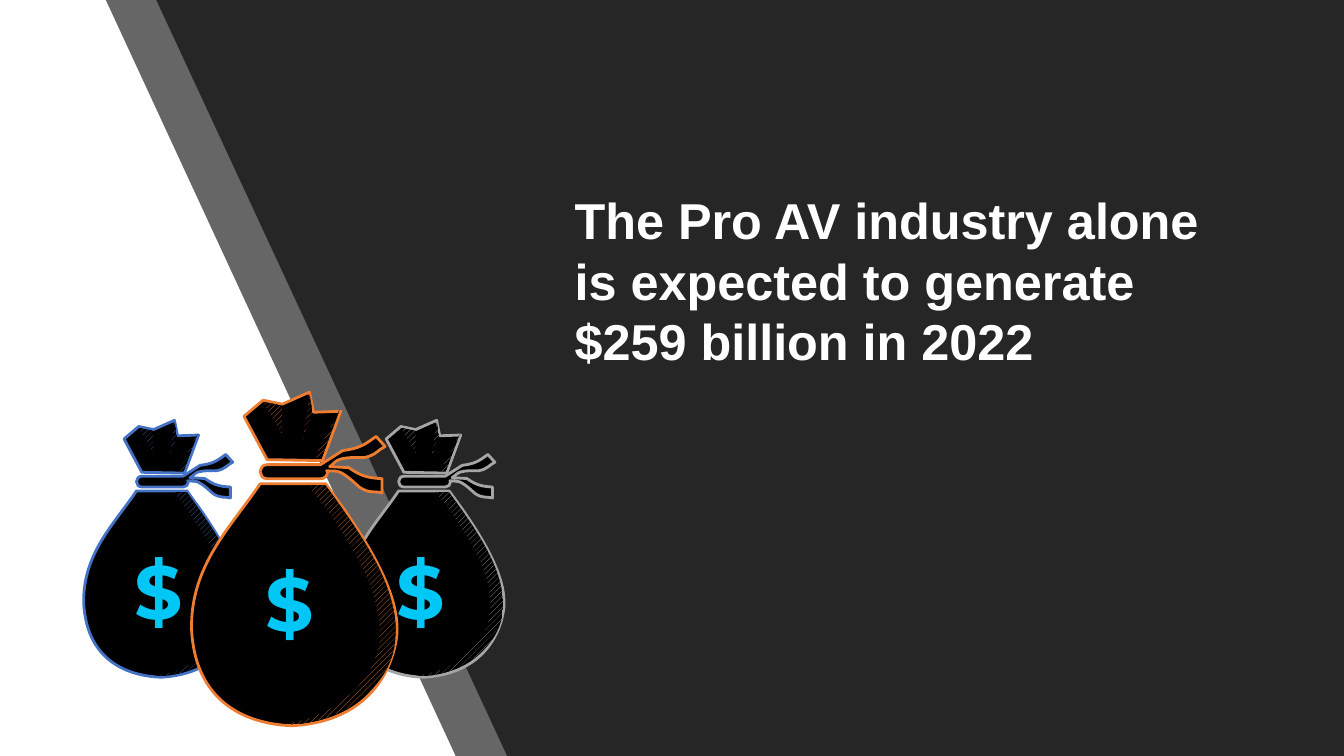
from math import cos, radians, sin

from lxml.etree import SubElement
from pptx import Presentation
from pptx.dml.color import RGBColor
from pptx.enum.dml import MSO_PATTERN
from pptx.enum.shapes import MSO_SHAPE
from pptx.enum.text import MSO_ANCHOR, MSO_AUTO_SIZE, PP_ALIGN
from pptx.oxml.ns import qn
from pptx.util import Inches, Pt

CURVE_STEPS = 12


def paint(fill, color, hatch=None):
    """Fill with one colour, or with diagonal hatching over it."""
    if hatch:
        fill.patterned()
        fill.pattern = MSO_PATTERN.WIDE_UPWARD_DIAGONAL
        fill.fore_color.rgb = RGBColor.from_string(hatch)
        fill.back_color.rgb = RGBColor.from_string(color)
    else:
        fill.solid()
        fill.fore_color.rgb = RGBColor.from_string(color)


def draw(shapes, outline, left=0, top=0, scale=1, turn=0, pivot=(0, 0)):
    """Closed outline: 2 numbers are a corner, 6 are a Bezier segment."""
    # Turn back about the pivot, so that the rotated shape lands in place
    c, s = cos(radians(turn)), sin(radians(turn))
    px, py = pivot
    steps = []
    for step in outline:
        pairs = [(x - px, y - py) for x, y in zip(step[::2], step[1::2])]
        steps.append([(Inches(left + (px + x * c + y * s) * scale),
                       Inches(top + (py - x * s + y * c) * scale)) for x, y in pairs])

    # Sampled curves give the exact frame
    points = []
    for step in steps:
        if len(step) == 1:
            points += step
            continue
        ends = [points[-1]] + step
        for i in range(1, CURVE_STEPS + 1):
            t = i / CURVE_STEPS
            u = 1 - t
            weights = (u ** 3, 3 * u * u * t, 3 * u * t * t, t ** 3)
            points.append(tuple(round(sum(w * end[axis] for w, end in zip(weights, ends)))
                                for axis in (0, 1)))
    builder = shapes.build_freeform(*points[0], scale=1.0)
    builder.add_line_segments(points[1:], close=True)
    shape = builder.convert_to_shape()

    # True Bezier segments inside that frame
    route = next(shape._element.iter(qn("a:path")))
    for child in list(route):
        route.remove(child)
    for index, step in enumerate(steps):
        tag = "a:cubicBezTo" if len(step) == 3 else "a:lnTo" if index else "a:moveTo"
        segment = SubElement(route, qn(tag))
        for x, y in step:
            SubElement(segment, qn("a:pt"), x=str(x - shape.left), y=str(y - shape.top))
    SubElement(route, qn("a:close"))
    shape.rotation = turn
    shape.shadow.inherit = False
    shape.line.fill.background()
    return shape


deck = Presentation()
deck.slide_width = Inches(13.33)
deck.slide_height = Inches(7.5)
page = deck.slides.add_slide(deck.slide_layouts[6])
paint(page.background.fill, "000000")

# White ground and the two slanted dark panels
ground = page.shapes.add_shape(MSO_SHAPE.RECTANGLE, 0, 0, deck.slide_width, deck.slide_height)
ground.shadow.inherit = False
paint(ground.fill, "FFFFFF")
ground.line.fill.background()

for upper, lower, right, opacity in [(1.05, 4.52, 13.32, 70), (1.55, 5.03, 13.33, 100)]:
    panel = draw(page.shapes, [(right, 7.5), (lower, 7.5), (upper, 0), (right, 0)])
    paint(panel.fill, "262626")
    if opacity < 100:
        tint = panel.fill._xPr.find(qn("a:solidFill"))[0]
        SubElement(tint, qn("a:alpha"), val=str(opacity * 1000))

# Parts of a money bag, measured from its top left corner
SACK = [(0.68, 0.91), (1.33, 0.91), (1.49, 1.13),
        (1.84, 1.63, 2.09, 2.10, 2.03, 2.46), (1.97, 2.82, 1.71, 3.27, 1.00, 3.31),
        (0.67, 3.30, 0.04, 3.17, 0.00, 2.35), (-0.01, 1.71, 0.40, 1.33, 0.68, 0.91)]
SACK_SHADE = [(1.33, 0.93), (1.76, 1.52, 2.06, 1.98, 2.02, 2.46),
              (1.99, 2.93, 1.47, 3.29, 0.99, 3.30), (0.91, 3.29), (1.01, 3.28),
              (1.43, 3.20, 1.83, 2.87, 1.86, 2.46), (1.89, 2.04, 1.67, 1.64, 1.32, 1.14),
              (1.16, 0.93)]
TIE = [(1.83, 0.44), (1.92, 0.54), (1.85, 0.57, 1.83, 0.63, 1.71, 0.65),
       (1.40, 0.64, 1.44, 0.70, 1.37, 0.74), (1.56, 0.75),
       (1.69, 0.84, 1.75, 0.85, 1.89, 0.86), (1.89, 1.00),
       (1.81, 0.98, 1.76, 1.01, 1.66, 0.94), (1.44, 0.73, 1.43, 0.80, 1.35, 0.78),
       (1.34, 0.78), (1.35, 0.79), (1.35, 0.83, 1.32, 0.86, 1.28, 0.86), (0.75, 0.86),
       (0.73, 0.86, 0.71, 0.85, 0.70, 0.84), (0.68, 0.79), (0.70, 0.74),
       (0.71, 0.73, 0.73, 0.72, 0.75, 0.72), (1.28, 0.72), (1.50, 0.58),
       (1.67, 0.56, 1.72, 0.52, 1.83, 0.44)]
RUFFLE = [(0.52, 0.24), (0.71, 0.08), (0.90, 0.12), (1.17, 0), (1.21, 0.20),
          (1.48, 0.19), (1.30, 0.68), (0.75, 0.67)]
RIGHT_FOLD = [(1.29, 0.65), (1.47, 0.17), (1.22, 0.65)]
MIDDLE_FOLD = [(1.16, 0.03), (1.09, 0.48), (1.19, 0.21)]
LEFT_FOLD = [(0.72, 0.10), (0.91, 0.43), (0.91, 0.14)]

# Outline, hatched, rotation, centre of rotation
PARTS = [
    (SACK, False, 0, (0, 0)),
    (SACK_SHADE, True, 292, (1.4, 2.22)),
    (TIE, False, 0, (0, 0)),
    (RUFFLE, False, 0, (0, 0)),
    (RIGHT_FOLD, True, 0, (0, 0)),
    (MIDDLE_FOLD, True, 151.1, (1.13, 0.25)),
    (LEFT_FOLD, True, 151.1, (0.87, 0.23)),
]

# Three money bags, the large one in front
for left, top, scale, accent in [(0.83, 4.17, 0.77, "4472C4"),
                                 (3.43, 4.17, 0.77, "A5A5A5"),
                                 (1.9, 3.89, 1, "ED7D31")]:
    bag = page.shapes.add_group_shape()
    for outline, hatched, turn, pivot in PARTS:
        part = draw(bag.shapes, outline, left, top, scale, turn, pivot)
        paint(part.fill, "000000", accent if hatched else None)
        if not hatched:
            paint(part.line.fill, accent)
            part.line.width = Pt(2)

    box = bag.shapes.add_textbox(Inches(left + 0.52 * scale), Inches(top + 1.73 * scale),
                                 Inches(0.9 * scale), Inches(0.76 * scale))
    frame = box.text_frame
    frame.word_wrap = True
    frame.vertical_anchor = MSO_ANCHOR.TOP
    frame.margin_left = frame.margin_right = frame.margin_top = frame.margin_bottom = 0
    para = frame.paragraphs[0]
    para.alignment = PP_ALIGN.CENTER
    para.line_spacing = 0.9
    para.space_before = Pt(7.5)
    span = para.add_run()
    span.text = "$"
    span.font.name = "Montserrat"
    span.font.size = Pt(54)
    span.font.bold = True
    paint(span.font.fill, "00C7F6")

# Statement
box = page.shapes.add_textbox(Inches(5.6), Inches(1.83), Inches(6.59), Inches(1.92))
box.text_frame.word_wrap = True
box.text_frame.auto_size = MSO_AUTO_SIZE.SHAPE_TO_FIT_TEXT
para = box.text_frame.paragraphs[0]
span = para.add_run()
span.text = "The Pro AV industry alone is expected to generate $259 billion in 2022"
span.font.name = "Arial"
span.font.size = Pt(36)
span.font.bold = True
paint(span.font.fill, "FFFFFF")

deck.save("out.pptx")
